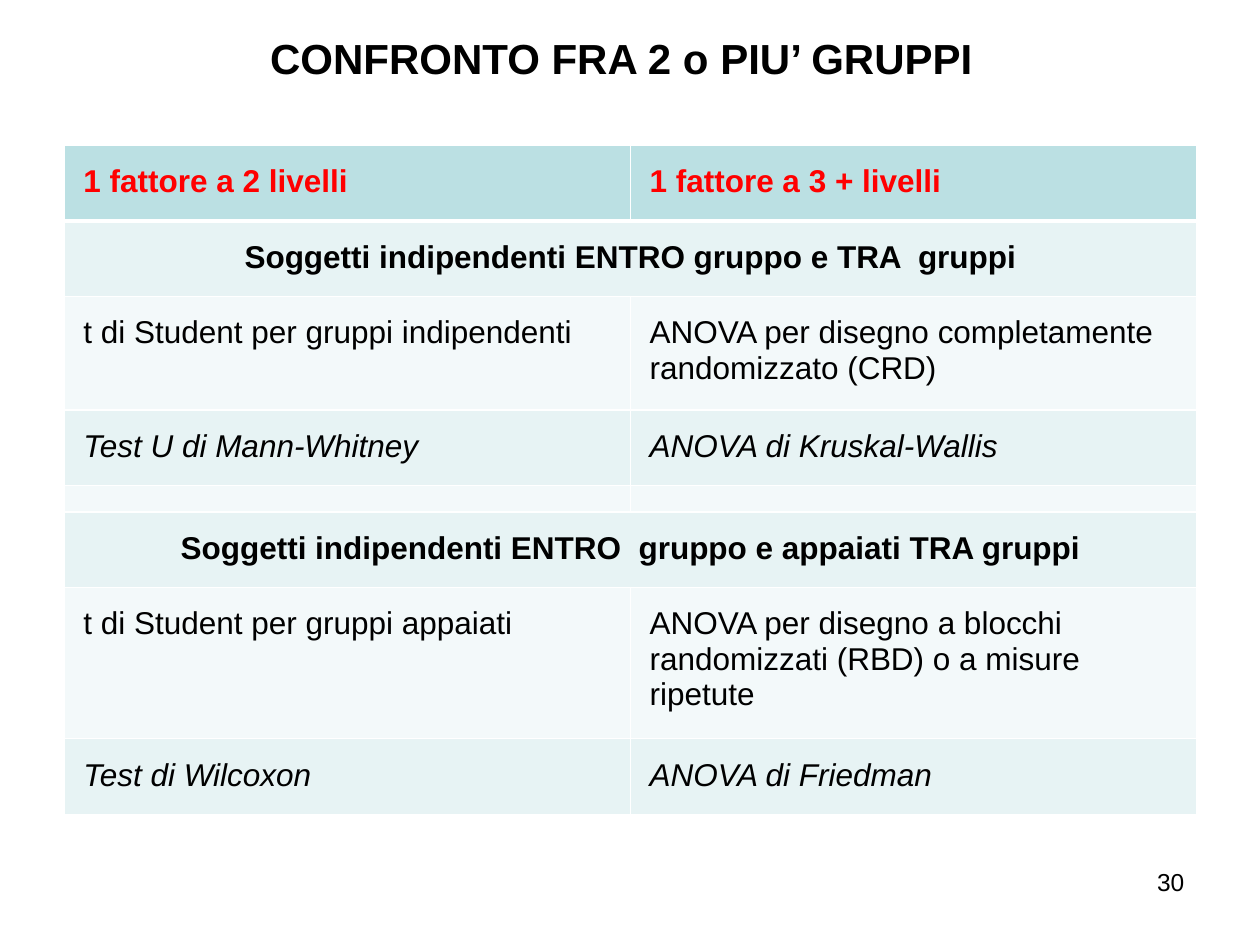
from lxml import etree
from pptx import Presentation
from pptx.dml.color import RGBColor
from pptx.enum import text
from pptx.oxml import ns
from pptx.util import Pt

# Content: one-item rows span both columns, an empty row is a spacer
TITLE = "CONFRONTO FRA 2 o PIU’ GRUPPI "
PAGE_NUMBER = "30"
ROWS = [  # height, style, cells
    (43.2, "header", ["1 fattore a 2 livelli", "1 fattore a 3 + livelli"]),
    (43.2, "section", ["Soggetti indipendenti ENTRO gruppo e TRA  gruppi"]),
    (64.8, "plain", ["t di Student per gruppi indipendenti",
                     "ANOVA per disegno completamente randomizzato (CRD)"]),
    (43.2, "italic", ["Test U di Mann-Whitney", "ANOVA di Kruskal-Wallis"]),
    (15.12, "spacer", ["", ""]),
    (43.2, "section", ["Soggetti indipendenti ENTRO  gruppo e appaiati TRA gruppi"]),
    (86.4, "plain", ["t di Student per gruppi appaiati",
                     "ANOVA per disegno a blocchi  randomizzati (RBD) o a misure ripetute"]),
    (43.2, "italic", ["Test di Wilcoxon", "ANOVA di Friedman"]),
]

BLACK = RGBColor(0, 0, 0)
RED = RGBColor(0xFF, 0, 0)
HEADER_FILL = RGBColor(0xBB, 0xE0, 0xE3)
BAND_FILLS = [RGBColor(0xF3, 0xF9, 0xFA), RGBColor(0xE7, 0xF3, 0xF4)]
WHITE = "FFFFFF"
FONT = "Arial"
TABLE_LEFT, TABLE_TOP, COLUMN_WIDTH = 36.9, 83, 323.5


def format_para(para, size, color=BLACK, bold=False, italic=False, align=None):
    font = para.font
    font.name, font.size, font.bold, font.italic = FONT, Pt(size), bold, italic
    font.color.rgb = color
    para.alignment = align


def set_margins(item, size):
    item.margin_left = item.margin_right = Pt(size)
    item.margin_top = item.margin_bottom = Pt(size)


def set_borders(cell, widths):
    """Add white borders; they must come before the cell's fill."""
    props = cell._tc.get_or_add_tcPr()
    for place, (side, width) in enumerate(widths.items()):
        line = etree.Element(ns.qn(f"a:ln{side}"), w=str(Pt(width)))
        fill = etree.SubElement(line, ns.qn("a:solidFill"))
        etree.SubElement(fill, ns.qn("a:srgbClr"), val=WHITE)
        props.insert(place, line)


deck = Presentation()
deck.slide_width, deck.slide_height = Pt(720), Pt(540)
page = deck.slides.add_slide(deck.slide_layouts[5])

# Title
title = page.shapes.title
title.left, title.top, title.width, title.height = Pt(2.9), Pt(15), Pt(711), Pt(36)
title.text_frame.text = TITLE
title.text_frame.vertical_anchor = text.MSO_ANCHOR.MIDDLE
format_para(title.text_frame.paragraphs[0], 24, bold=True, align=text.PP_ALIGN.CENTER)

# Table
table = page.shapes.add_table(
    len(ROWS), 2, Pt(TABLE_LEFT), Pt(TABLE_TOP), Pt(2 * COLUMN_WIDTH),
    Pt(sum(height for height, _, _ in ROWS))).table
table.first_row = table.horz_banding = False
for column in table.columns:
    column.width = Pt(COLUMN_WIDTH)

for index, (height, style, cells) in enumerate(ROWS):
    table.rows[index].height = Pt(height)
    header, section, spacer = (style == name for name in ("header", "section", "spacer"))
    if section:
        table.cell(index, 0).merge(table.cell(index, 1))
    for cell, words in zip(table.rows[index].cells, cells):
        cell.text = words
        set_margins(cell, 2 if spacer else 10.8)
        cell.fill.solid()
        cell.fill.fore_color.rgb = HEADER_FILL if header else BAND_FILLS[index % 2]
        set_borders(cell, {"L": 1, "R": 1, "T": 3 if index == 1 else 1,
                           "B": 3 if header else 1})
        format_para(cell.text_frame.paragraphs[0], 6 if spacer else 18,
                    RED if header else BLACK, header or section, style == "italic",
                    text.PP_ALIGN.CENTER if section else text.PP_ALIGN.LEFT)

# Page number
box = page.shapes.add_textbox(Pt(614.9), Pt(491.8), Pt(69), Pt(37.5))
box.text_frame.word_wrap = True
box.text_frame.text = PAGE_NUMBER
format_para(box.text_frame.paragraphs[0], 14, align=text.PP_ALIGN.RIGHT)

deck.save("out.pptx")
